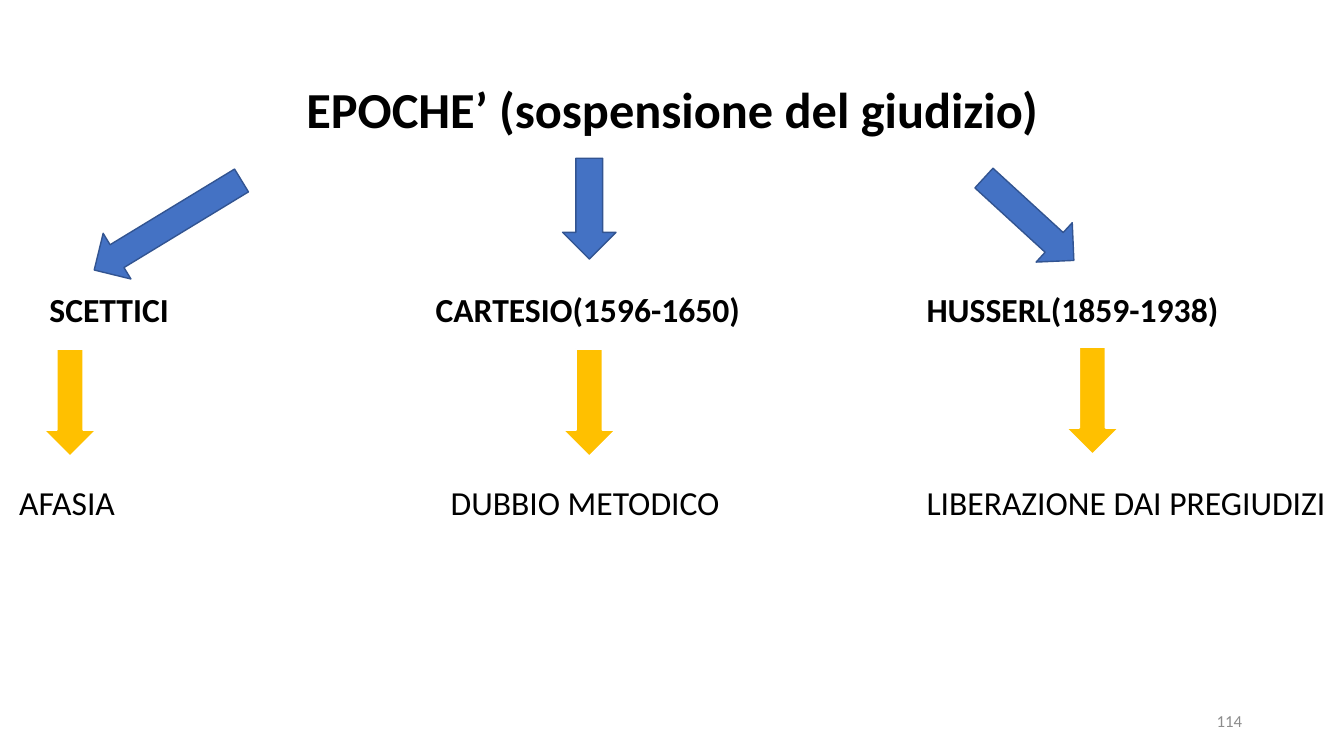
from dataclasses import dataclass

from pptx import Presentation
from pptx.dml.color import RGBColor
from pptx.enum.shapes import MSO_SHAPE
from pptx.enum.text import MSO_ANCHOR, PP_ALIGN
from pptx.util import Inches, Pt


@dataclass(frozen=True)
class Theme:
    font: str = "Calibri"
    title_size: int = 36
    label_size: int = 24
    number_size: int = 12
    black: str = "000000"
    gray: str = "8C8C8C"
    blue: str = "4472C4"
    blue_edge: str = "325491"
    gold: str = "FFC000"
    white: str = "FFFFFF"


THEME = Theme()
ARROW_WIDTH = 0.53
LABEL_HEIGHT = 0.4


@dataclass(frozen=True)
class Branch:
    thinker: str
    thinker_left: float
    outcome: str
    outcome_left: float
    blue_arrow: tuple
    rotation: float
    gold_arrow: tuple


BRANCHES = [
    Branch("SCETTICI", 0.49, "AFASIA", 0.19, (1.4, 1.38, 1.71), 58.7, (0.43, 3.46)),
    Branch("CARTESIO(1596-1650)", 4.32, "DUBBIO METODICO", 4.47,
           (5.58, 1.57, 1), 0, (5.58, 3.46)),
    Branch("HUSSERL(1859-1938)", 9.19, "LIBERAZIONE DAI PREGIUDIZI", 9.19,
           (9.94, 1.57, 1.21), 312.5, (10.57, 3.44)),
]


def write(shape, text, size, color, bold=False, align=PP_ALIGN.LEFT):
    frame = shape.text_frame
    frame.word_wrap = True
    frame.vertical_anchor = MSO_ANCHOR.MIDDLE
    frame.margin_left = frame.margin_right = 0
    frame.margin_top = frame.margin_bottom = 0
    frame.text = text
    para = frame.paragraphs[0]
    para.alignment = align
    para.font.name = THEME.font
    para.font.size = Pt(size)
    para.font.bold = bold
    para.font.color.rgb = RGBColor.from_string(color)


def add_title(page, left, top, width, height):
    title = page.shapes.title
    title.left, title.top = Inches(left), Inches(top)
    title.width, title.height = Inches(width), Inches(height)
    write(title, "EPOCHE’ (sospensione del giudizio)", THEME.title_size,
          THEME.black, True, PP_ALIGN.CENTER)


def add_label(page, text, left, top, width, bold):
    box = page.shapes.add_textbox(Inches(left), Inches(top),
                                  Inches(width), Inches(LABEL_HEIGHT))
    write(box, text, THEME.label_size, THEME.black, bold)


def add_arrow(page, left, top, height, fill, edge, edge_width, rotation=0):
    arrow = page.shapes.add_shape(MSO_SHAPE.DOWN_ARROW, Inches(left), Inches(top),
                                  Inches(ARROW_WIDTH), Inches(height))
    arrow.shadow.inherit = False
    arrow.rotation = rotation
    arrow.fill.solid()
    arrow.fill.fore_color.rgb = RGBColor.from_string(fill)
    arrow.line.color.rgb = RGBColor.from_string(edge)
    arrow.line.width = Pt(edge_width)


def add_branch(page, branch, thinker_top, outcome_top, width):
    add_label(page, branch.thinker, branch.thinker_left, thinker_top, width, True)
    add_label(page, branch.outcome, branch.outcome_left, outcome_top, width, False)
    add_arrow(page, *branch.blue_arrow, THEME.blue, THEME.blue_edge, 1, branch.rotation)
    add_arrow(page, *branch.gold_arrow, 1.07, THEME.gold, THEME.white, 1.5)


def add_page_number(page, left, top, width, height):
    box = page.shapes.add_textbox(Inches(left), Inches(top),
                                  Inches(width), Inches(height))
    write(box, "114", THEME.number_size, THEME.gray, align=PP_ALIGN.RIGHT)


def main():
    deck = Presentation()
    deck.slide_width, deck.slide_height = Inches(13.33), Inches(7.5)
    page = deck.slides.add_slide(deck.slide_layouts[5])
    add_title(page, 0.09, 0.75, 13.16, 0.65)
    for branch in BRANCHES:
        add_branch(page, branch, 2.87, 4.78, 4.1)
    add_page_number(page, 9.42, 6.95, 2.9, 0.4)
    deck.save("out.pptx")


if __name__ == "__main__":
    main()
